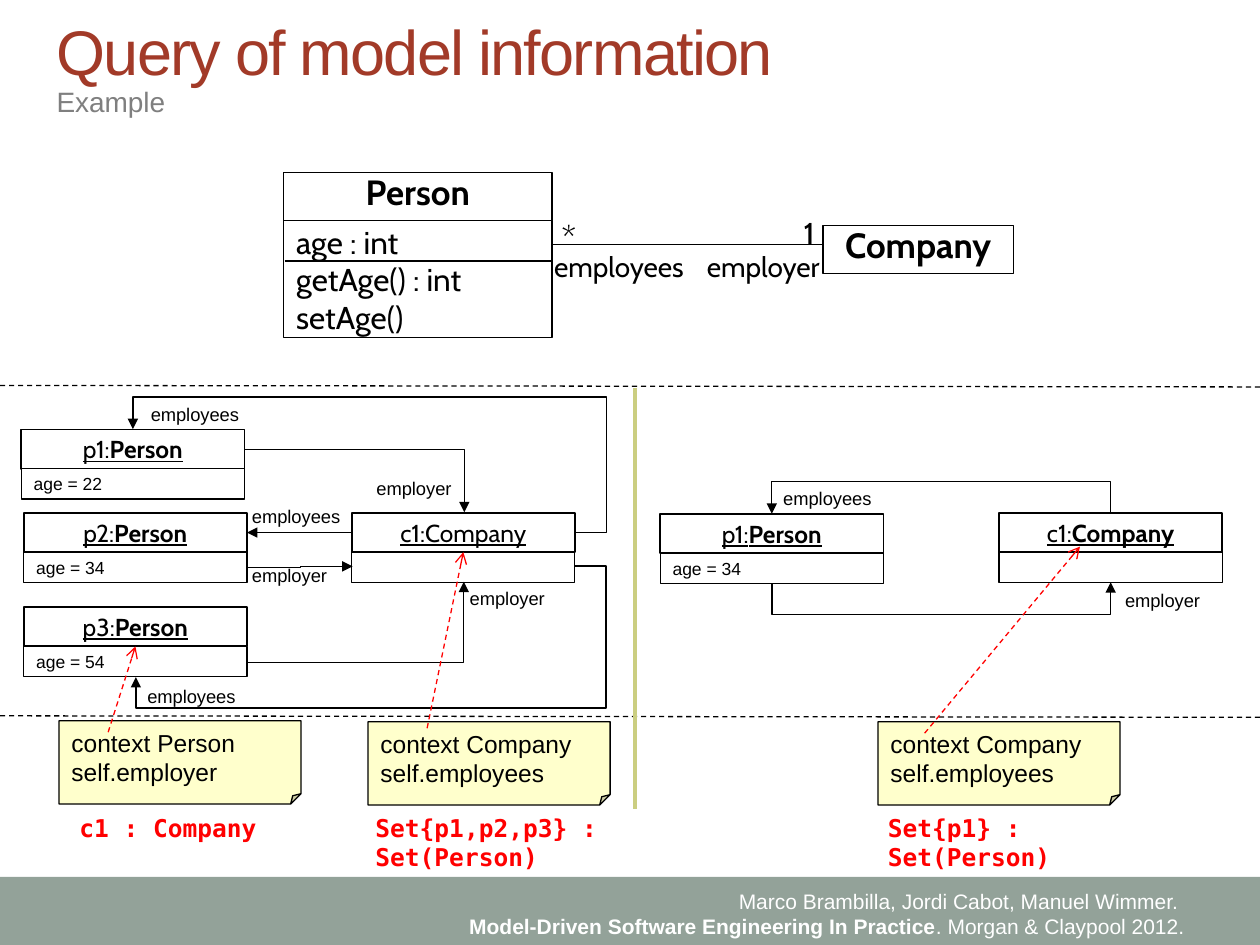
from collections import namedtuple
from dataclasses import dataclass

from lxml import etree
from pptx import Presentation
from pptx.dml.color import RGBColor
from pptx.enum.dml import MSO_LINE
from pptx.enum.shapes import MSO_CONNECTOR, MSO_SHAPE
from pptx.enum.text import MSO_ANCHOR, PP_ALIGN
from pptx.oxml.ns import qn
from pptx.util import Cm, Pt

RECT, NOTE = MSO_SHAPE.RECTANGLE, MSO_SHAPE.FOLDED_CORNER
LINE, ELBOW = MSO_CONNECTOR.STRAIGHT, MSO_CONNECTOR.ELBOW
LEFT, MID, RIGHT = PP_ALIGN.LEFT, PP_ALIGN.CENTER, PP_ALIGN.RIGHT
TOP, CENTER = MSO_ANCHOR.TOP, MSO_ANCHOR.MIDDLE
DASH = MSO_LINE.DASH

BLACK, WHITE = RGBColor(0, 0, 0), RGBColor(255, 255, 255)
RED, BRICK = RGBColor(255, 0, 0), RGBColor(0xA2, 0x3A, 0x28)
GRAY, SAGE = RGBColor(0x7F, 0x7F, 0x7F), RGBColor(0x93, 0xA2, 0x99)
OLIVE, CREAM = RGBColor(0xCB, 0xCE, 0x81), RGBColor(0xFF, 0xFF, 0xCC)

SANS, UML, MONO = "Arial", "Cabin", "DejaVu Sans Mono"
WIDE, HEAD, SLOT = 4.5, 0.79, 0.61  # object box: width, name and slot heights

Thing = namedtuple("Thing", "name kind slot x y bold", defaults=[True])
Bend = namedtuple("Bend", "x y w h turn flip legs adj end", defaults=["headEnd"])

@dataclass
class Style:
    size: float
    face: str = SANS
    color: RGBColor = BLACK
    bold: bool = False
    under: bool = False
    align: PP_ALIGN = LEFT
    anchor: MSO_ANCHOR = TOP

CLASS = Style(20, UML, bold=True, align=MID)
PART = Style(18, UML, anchor=CENTER)
ROLE = Style(16, UML)
LINK = Style(10.5)
NAME = Style(14, UML, under=True, align=MID, anchor=CENTER)
VALUE = Style(10, anchor=CENTER)
QUERY = Style(14, anchor=CENTER)
ANSWER = Style(14, MONO, RED, bold=True)
FOOT = Style(12, color=WHITE, align=RIGHT)

prs = Presentation()
prs.slide_width, prs.slide_height = Cm(25.4), Cm(19.05)
shapes = prs.slides.add_slide(prs.slide_layouts[6]).shapes

def write(shape, text: str, style: Style) -> None:
    frame = shape.text_frame
    frame.word_wrap, frame.vertical_anchor = True, style.anchor
    frame.text = text
    for par in frame.paragraphs:
        par.alignment = style.align
        font = par.font
        font.size, font.name = Pt(style.size), style.face
        font.bold, font.underline = style.bold, style.under
        font.color.rgb = style.color

def label(text: str, x: float, y: float, w: float, h: float, style: Style):
    box = shapes.add_textbox(Cm(x), Cm(y), Cm(w), Cm(h))
    write(box, text, style)
    return box

def block(x: float, y: float, w: float, h: float, fill: RGBColor = WHITE,
          form: MSO_SHAPE = RECT, edge: float = 0.75):
    box = shapes.add_shape(form, Cm(x), Cm(y), Cm(w), Cm(h))
    box.shadow.inherit = False
    box.fill.solid()
    box.fill.fore_color.rgb = fill
    if edge:
        box.line.color.rgb, box.line.width = BLACK, Pt(edge)
    else:
        box.line.fill.background()
    return box

def add_run(par, text: str, bold: bool) -> None:
    run = par.add_run()
    run.text, run.font.bold = text, bold

def thing(item: Thing):
    top = block(item.x, item.y, WIDE, HEAD, edge=1)
    write(top, "", NAME)
    par = top.text_frame.paragraphs[0]
    add_run(par, item.name + ":", False)
    add_run(par, item.kind, item.bold)
    low = block(item.x, item.y + HEAD, WIDE, SLOT)
    if item.slot:
        write(low, item.slot, VALUE)
    return top

def adjust(shape, **parts: float) -> None:
    guides = shape.element.spPr.find(qn("a:prstGeom")).find(qn("a:avLst"))
    for name, part in parts.items():
        etree.SubElement(guides, qn("a:gd"), name=name, fmla=f"val {round(part * 100000)}")

def ink(wire, color: RGBColor, width: float, dash=None, end: str = "", tip: str = "triangle") -> None:
    wire.line.color.rgb, wire.line.width = color, Pt(width)
    if dash:
        wire.line.dash_style = dash
    props = wire.element.spPr
    if end:
        etree.SubElement(props.find(qn("a:ln")), qn("a:" + end), type=tip)
    etree.SubElement(props, qn("a:effectLst"))

def line(x: float, y: float, to_x: float, to_y: float, color: RGBColor = BLACK,
         width: float = 0.75, **look):
    wire = shapes.add_connector(LINE, Cm(x), Cm(y), Cm(to_x), Cm(to_y))
    ink(wire, color, width, **look)
    return wire

def bend(item: Bend) -> None:
    wire = shapes.add_connector(ELBOW, Cm(item.x), Cm(item.y),
                                Cm(item.x + item.w), Cm(item.y + item.h))
    props = wire.element.spPr
    form = props.find(qn("a:xfrm"))
    form.set("rot", str(item.turn * 60000))
    for axis in item.flip:
        form.set("flip" + axis, "1")
    props.find(qn("a:prstGeom")).set("prst", f"bentConnector{item.legs}")
    adjust(wire, **{f"adj{num}": part for num, part in enumerate(item.adj, 1)})
    ink(wire, BLACK, 0.75, end=item.end)

# Footer
block(0, 17.68, 25.4, 1.37, SAGE, edge=0)
foot = label("Marco Brambilla, Jordi Cabot, Manuel Wimmer. \n", 7.47, 17.78, 16.66, 1.27, FOOT)
book = foot.text_frame.paragraphs[1]
add_run(book, "Model-Driven Software Engineering In Practice", True)
add_run(book, ". Morgan & Claypool 2012.", False)

# Title
title = label("Query of model information", 0.89, 0.43, 23.7, 1.17,
              Style(36, color=BRICK, anchor=CENTER))
title.text_frame.paragraphs[0].runs[0].font._element.set("spc", "-100")
label("Example", 0.89, 1.57, 23.7, 0.99, Style(16, color=GRAY))

# Class diagram
for text, x, y, w in (("Person", 5.72, 3.48, 5.41), ("Company", 16.59, 4.55, 3.84)):
    box = block(x, y, w, 0.97)
    write(box, text, CLASS)
    box.text_frame.paragraphs[0].line_spacing = 0.8
write(block(5.72, 4.45, 5.41, 2.36), "age : int\vgetAge() : int\nsetAge()", PART)
line(5.74, 5.26, 11.13, 5.26)
line(11.15, 4.93, 16.59, 4.93)
label("employees", 10.92, 4.9, 3.4, 0.94, ROLE)
label("employer", 14, 4.9, 3.02, 0.94, ROLE)
label("*", 11.07, 4.24, 0.74, 1.09, Style(20, UML))
label("1", 15.95, 4.19, 0.74, 0.94, Style(18, UML))

# Dividers
for y in (7.77, 14.43):
    line(0, y, 25.4, y + 0.03, dash=DASH)
line(12.8, 7.82, 12.8, 16.31, OLIVE, 2)

# Object diagrams
p1, p2, p3, firm, *rest = [thing(item) for item in (
    Thing("p1", "Person", "age = 22", 0.43, 8.66),
    Thing("p2", "Person", "age = 34", 0.48, 10.34),
    Thing("p3", "Person", "age = 54", 0.48, 12.24),
    Thing("c1", "Company", "", 7.09, 10.34, False),
    Thing("p1", "Person", "age = 34", 13.31, 10.36),
    Thing("c1", "Company", "", 20.14, 10.34))]
for item in (Bend(5, 11.42, 2.11, 0.02, 0, "V", 3, (0.5,), "tailEnd"),
             Bend(4.98, 11.73, 4.37, 1.63, 0, "V", 2, (), "tailEnd"),
             Bend(6.1, 5.23, 2.08, 8.92, 270, "H", 4, (-0.31, 1.07)),
             Bend(6.05, 8.1, 2.24, 8.86, 90, "HV", 4, (-0.28, 1.07)),
             Bend(6.5, 7.47, 1.27, 4.45, 270, "V", 2, ()),
             Bend(18.96, 6.93, 0.03, 6.83, 90, "HV", 3, (21.6,)),
             Bend(18.96, 8.34, 0.03, 6.83, 90, "", 3, (21.6,))):
    bend(item)
back = line(7.09, 10.73, 4.98, 10.73, end="tailEnd")
back.begin_connect(firm, 1)
back.end_connect(p2, 3)
for text, w, spots in (
        ("employees", 2.84, ((2.72, 13.69), (2.79, 8), (4.83, 10.06), (15.54, 9.7))),
        ("employer", 2.49, ((4.83, 11.25), (9.22, 11.71), (7.34, 9.5), (22.43, 11.76)))):
    for x, y in spots:
        label(text, x, y, w, 0.71, LINK)

# Queries and their results
for text, x, y in (("context Person\nself.employer", 1.19, 14.53),
                   ("context Company\nself.employees", 7.42, 14.55),
                   ("context Company\nself.employees", 17.7, 14.55)):
    note = block(x, y, 4.88, 1.68, CREAM, NOTE)
    adjust(note, adj=0.125)
    write(note, text, QUERY)
for x, y, to_x, to_y, goal in ((2.18, 14.76, 2.73, 13.03, p3),
                               (8.61, 14.68, 9.34, 11.13, firm),
                               (18.64, 14.78, 21.77, 11.02, None)):
    ray = line(x, y, to_x, to_y, RED, dash=DASH, end="tailEnd", tip="arrow")
    if goal:
        ray.end_connect(goal, 2)
for text, x, w, h in (("c1 : Company", 1.35, 4.5, 0.86),
                      ("Set{p1,p2,p3} :\vSet(Person)", 7.32, 6.07, 1.45),
                      ("Set{p1} :\vSet(Person)", 17.65, 4.37, 1.45)):
    label(text, x, 16.26, w, h, ANSWER)

prs.save("out.pptx")
